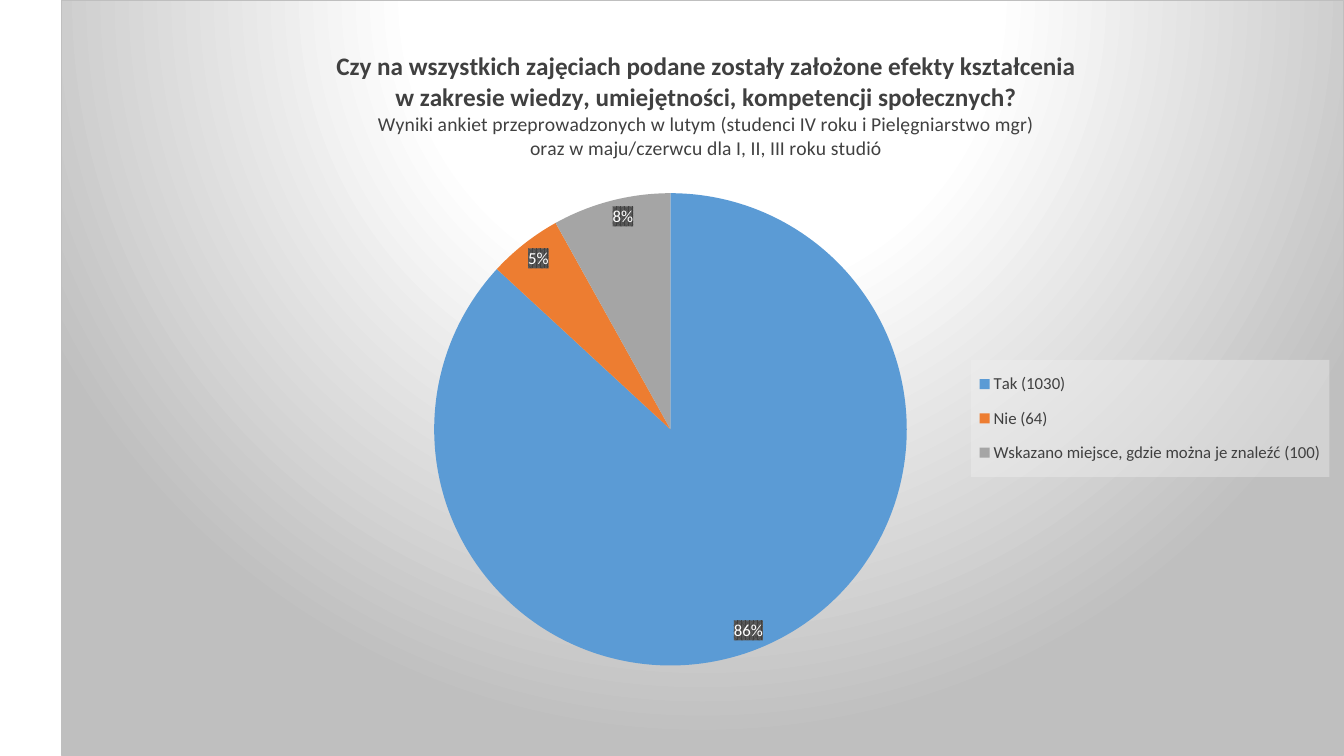
from dataclasses import dataclass

from lxml.etree import QName
from pptx import Presentation
from pptx.chart.data import CategoryChartData
from pptx.dml.color import RGBColor
from pptx.enum.chart import XL_CHART_TYPE, XL_LABEL_POSITION, XL_LEGEND_POSITION
from pptx.oxml import parse_xml
from pptx.oxml.ns import nsdecls, qn
from pptx.util import Emu, Pt

EMU_PER_PX = 914400 / 100.8


@dataclass(frozen=True)
class Theme:
    font: str = "Calibri"
    text: str = "404040"
    label_text: str = "FFFFFF"
    label_pattern: str = "595959"
    background: str = "FFFFFF"
    border: str = "BFBFBF"
    legend_fill: str = "F2F2F2"
    slices: tuple = ("5B9BD5", "ED7D31", "A5A5A5")
    heading_size: int = 18
    subheading_size: int = 14
    body_size: int = 12


def px(length):
    return Emu(round(length * EMU_PER_PX))


def solid(color, extra=""):
    return f'<a:solidFill><a:srgbClr val="{color}">{extra}</a:srgbClr></a:solidFill>'


def shape_properties(content):
    return parse_xml(f'<c:spPr {nsdecls("c", "a")}>{content}</c:spPr>')


class PieSlide:
    def __init__(self, presentation, theme):
        self.theme = theme
        self.slide = presentation.slides.add_slide(presentation.slide_layouts[6])

    def style_font(self, font, size, color, bold=False):
        font.name = self.theme.font
        font.size = Pt(size)
        font.bold = bold
        font.color.rgb = RGBColor.from_string(color)

    def place(self, element, left, top, width=None, height=None):
        """Fix a chart part at px offsets inside the chart frame."""
        for layout in element.findall(qn("c:layout")):
            element.remove(layout)
        sizes = {"x": left / self.width, "y": top / self.height}
        if width:
            sizes |= {"w": width / self.width, "h": height / self.height}
        is_plot = QName(element).localname == "plotArea"
        target = '<c:layoutTarget val="inner"/>' if is_plot else ""
        modes = "".join(f'<c:{key}Mode val="edge"/>' for key in "xy")
        values = "".join(f'<c:{key} val="{value:.4f}"/>' for key, value in sizes.items())
        layout = parse_xml(
            f'<c:layout {nsdecls("c")}><c:manualLayout>{target}{modes}{values}'
            "</c:manualLayout></c:layout>"
        )
        element.insert(0 if is_plot else 1, layout)

    def add_pie(self, left, top, width, height, categories, values, plot_box):
        self.width, self.height = width, height
        data = CategoryChartData(number_format='0"%"')
        data.categories = categories
        data.add_series("Series 1", values)
        frame = self.slide.shapes.add_chart(
            XL_CHART_TYPE.PIE, px(left), px(top), px(width), px(height), data
        )
        self.chart = frame.chart
        self.style_font(self.chart.font, self.theme.body_size, self.theme.text)
        plot = self.chart.plots[0]
        plot.vary_by_categories = True
        for index, color in enumerate(self.theme.slices):
            fill = plot.series[0].points[index].format.fill
            fill.solid()
            fill.fore_color.rgb = RGBColor.from_string(color)
        self.place(self.chart.element.find(".//" + qn("c:plotArea")), *plot_box)

    def add_background(self):
        theme = self.theme
        stops = ((0, theme.background), (39, theme.background), (100, theme.border))
        gradient = "".join(
            f'<a:gs pos="{position * 1000}"><a:srgbClr val="{color}"/></a:gs>'
            for position, color in stops
        )
        self.chart.element.find(qn("c:chart")).addnext(shape_properties(
            f'<a:gradFill><a:gsLst>{gradient}</a:gsLst><a:path path="circle">'
            '<a:fillToRect l="50000" t="-80000" r="50000" b="180000"/></a:path></a:gradFill>'
            f'<a:ln w="{Pt(0.75)}">{solid(theme.border)}</a:ln>'
        ))

    def add_title(self, left, top, lines):
        title = self.chart.chart_title
        title.include_in_layout = False
        frame = title.text_frame
        for index, (text, size, bold) in enumerate(lines):
            paragraph = frame.paragraphs[0] if index == 0 else frame.add_paragraph()
            paragraph.text = text
            self.style_font(paragraph.font, size, self.theme.text, bold)
        self.place(self.chart.element.find(".//" + qn("c:title")), left, top)

    def add_labels(self):
        theme = self.theme
        labels = self.chart.plots[0].series[0].data_labels
        labels.show_value = True
        labels.show_percentage = False
        labels.number_format = '0"%"'
        labels.number_format_is_linked = False
        labels.position = XL_LABEL_POSITION.INSIDE_END
        self.style_font(labels.font, theme.body_size, theme.label_text)
        number_format = self.chart.element.find(f".//{qn('c:dLbls')}/{qn('c:numFmt')}")
        number_format.addnext(shape_properties(
            f'<a:pattFill prst="pct75"><a:fgClr><a:srgbClr val="{theme.text}"/></a:fgClr>'
            f'<a:bgClr><a:srgbClr val="{theme.label_pattern}"/></a:bgClr></a:pattFill>'
        ))

    def add_legend(self, left, top, width, height):
        self.chart.has_legend = True
        legend = self.chart.legend
        legend.position = XL_LEGEND_POSITION.RIGHT
        legend.include_in_layout = False
        self.style_font(legend.font, self.theme.body_size, self.theme.text)
        element = self.chart.element.find(".//" + qn("c:legend"))
        self.place(element, left, top, width, height)
        element.find(qn("c:overlay")).addnext(
            shape_properties(solid(self.theme.legend_fill, '<a:alpha val="39000"/>'))
        )


def main():
    presentation = Presentation()
    presentation.slide_width, presentation.slide_height = px(1344), px(756)
    theme = Theme()
    page = PieSlide(presentation, theme)

    # Pie on a radial background
    page.add_pie(
        61, 0, 1283, 756,
        ("Tak (1030)", "Nie (64)", "Wskazano miejsce, gdzie można je znaleźć (100)"),
        (86, 5, 8),
        plot_box=(373, 193, 473, 473),
    )
    page.add_background()

    # Question and survey details
    heading = (theme.heading_size, True)
    details = (theme.subheading_size, False)
    page.add_title(272, 46, (
        ("Czy na wszystkich zajęciach podane zostały założone efekty kształcenia", *heading),
        ("w zakresie wiedzy, umiejętności, kompetencji społecznych?", *heading),
        ("Wyniki ankiet przeprowadzonych w lutym (studenci IV roku i Pielęgniarstwo mgr)", *details),
        ("oraz w maju/czerwcu dla I, II, III roku studió", *details),
    ))

    # Slice labels and legend
    page.add_labels()
    page.add_legend(910, 360, 359, 117)

    presentation.save("out.pptx")


if __name__ == "__main__":
    main()
